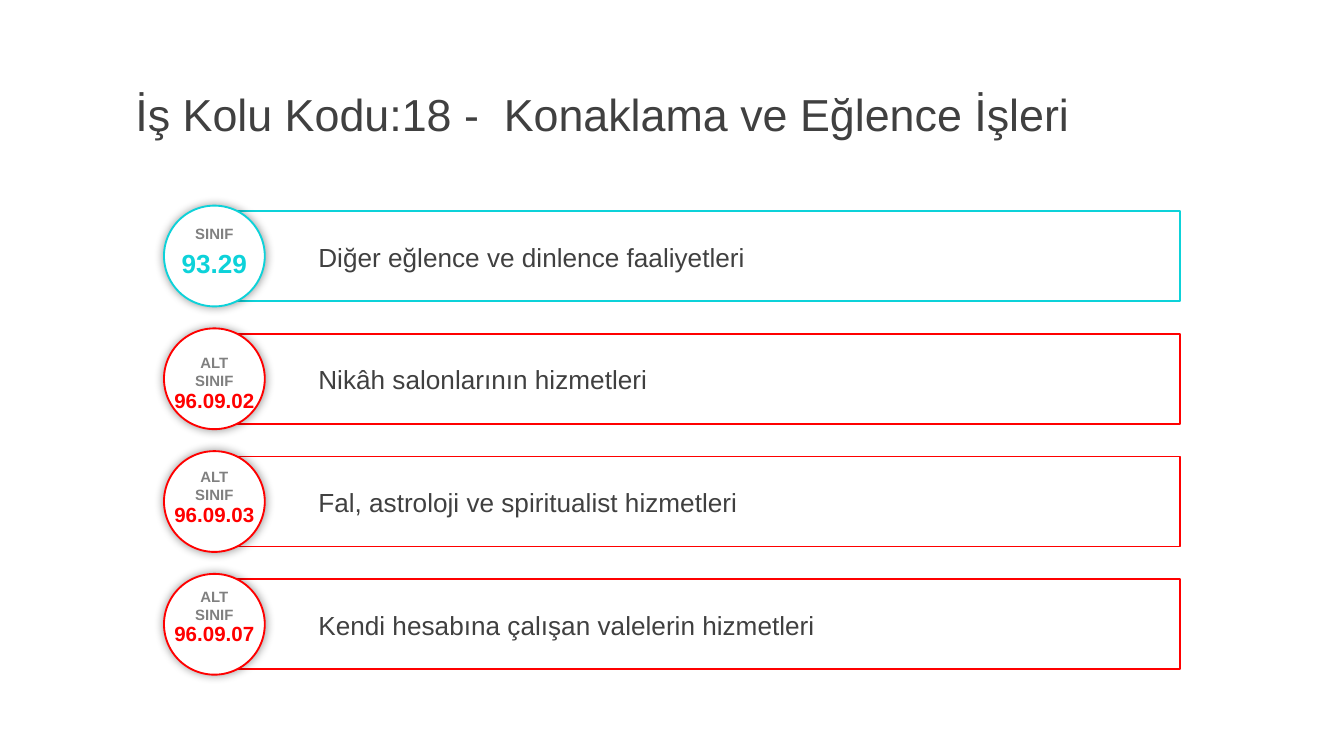
"""Builds the slide of activity classes under work code 18."""
from dataclasses import dataclass

from lxml import etree
from pptx import Presentation
from pptx.dml.color import RGBColor
from pptx.enum.shapes import MSO_SHAPE
from pptx.enum.text import MSO_ANCHOR, MSO_AUTO_SIZE, PP_ALIGN
from pptx.oxml.ns import qn
from pptx.util import Inches, Pt

RECT, OVAL = MSO_SHAPE.RECTANGLE, MSO_SHAPE.OVAL
MIDDLE = MSO_ANCHOR.MIDDLE
LEFT, CENTER = PP_ALIGN.LEFT, PP_ALIGN.CENTER
GROW, FIXED = MSO_AUTO_SIZE.SHAPE_TO_FIT_TEXT, MSO_AUTO_SIZE.NONE


@dataclass(frozen=True)
class Theme:
    font: str = "Arial"
    ink: str = "404040"
    gray: str = "808080"
    white: str = "FFFFFF"
    black: str = "000000"
    cyan: str = "0DD2D9"
    red: str = "FF0000"
    title: int = 24
    body: int = 14
    code: int = 11
    label: int = 8
    line: int = 1
    blur: int = 5
    alpha: int = 40


def apply(target, values):
    for name, value in values.items():
        setattr(target, name, value)


class Board:
    def __init__(self, slide, theme):
        self.slide = slide
        self.theme = theme

    def text(self, box, lines, size, color, align=LEFT, bold=False, fit=GROW):
        shape = self.slide.shapes.add_textbox(*map(Inches, box))
        frame = shape.text_frame
        apply(frame, {"word_wrap": True, "auto_size": fit,
                      "vertical_anchor": MIDDLE, "text": "\n".join(lines)})
        for para in frame.paragraphs:
            para.alignment = align
            apply(para.font, {"name": self.theme.font, "size": Pt(size), "bold": bold})
            para.font.color.rgb = RGBColor.from_string(color)

    def shape(self, kind, box, color):
        shape = self.slide.shapes.add_shape(kind, *map(Inches, box))
        shape.fill.background()
        shape.line.color.rgb = RGBColor.from_string(color)
        shape.line.width = Pt(self.theme.line)
        shape.shadow.inherit = False
        return shape

    def bar(self, box, color):
        self.shape(RECT, box, color)

    def badge(self, box, color):
        theme = self.theme
        shape = self.shape(OVAL, box, color)
        shape.fill.solid()
        shape.fill.fore_color.rgb = RGBColor.from_string(theme.white)
        effects = shape.element.spPr.find(qn("a:effectLst"))
        shadow = etree.SubElement(effects, qn("a:outerShdw"), blurRad=str(Pt(theme.blur)),
                                  dist="0", dir="0", algn="ctr", rotWithShape="0")
        tint = etree.SubElement(shadow, qn("a:srgbClr"), val=theme.black)
        etree.SubElement(tint, qn("a:alpha"), val=str(theme.alpha * 1000))


def main():
    deck = Presentation()
    deck.slide_width, deck.slide_height = Inches(10), Inches(10 * 9 / 16)
    theme = Theme()
    board = Board(deck.slides.add_slide(deck.slide_layouts[6]), theme)
    board.text((0.91, 0.53, 9.17, 0.63), ["İş Kolu Kodu:18 -  Konaklama ve Eğlence İşleri"],
               theme.title, theme.ink, fit=FIXED)

    main_style = {"lines": ["SINIF"], "tall": 0.24, "gap": 0.17,
                  "size": theme.body, "high": 0.34, "color": theme.cyan}
    sub_style = {"lines": ["ALT", "SINIF"], "tall": 0.37, "gap": 0.25,
                 "size": theme.code, "high": 0.29, "color": theme.red}
    rows = [
        ("93.29", "Diğer eğlence ve dinlence faaliyetleri", 1.62, main_style),
        ("96.09.02", "Nikâh salonlarının hizmetleri", 2.58, sub_style),
        ("96.09.03", "Fal, astroloji ve spiritualist hizmetleri", 3.43, sub_style),
        ("96.09.07", "Kendi hesabına çalışan valelerin hizmetleri", 4.32, sub_style),
    ]
    first, last = 1.53, 4.27
    pitch = (last - first) / (len(rows) - 1)
    for index, (code, name, top, style) in enumerate(rows):
        y = first + index * pitch
        color = style["color"]
        board.bar((1.59, y + 0.04, 7.19, 0.67), color)
        board.text((2.27, y + 0.21, 6.28, 0.34), [name], theme.body, theme.ink)
        board.badge((1.22, y, 0.75, 0.75), color)
        board.text((1.14, top + style["gap"], 0.91, style["high"]), [code],
                   style["size"], color, CENTER, True)
        board.text((1.14, top, 0.91, style["tall"]), style["lines"],
                   theme.label, theme.gray, CENTER, True)
    deck.save("out.pptx")


if __name__ == "__main__":
    main()
